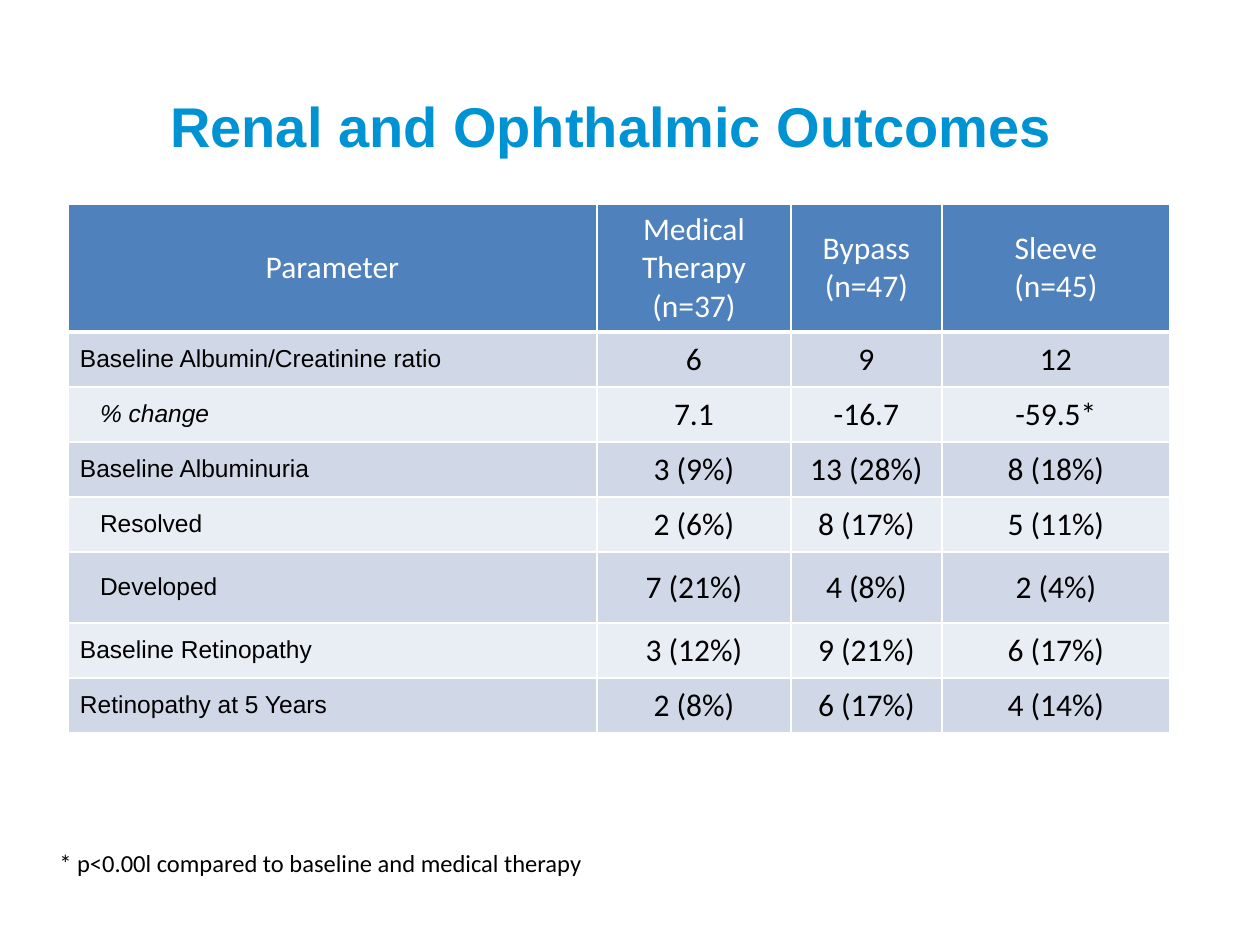
import pptx
import pptx.dml.color
import pptx.enum.text
import pptx.oxml
import pptx.oxml.ns
import pptx.util

RGBColor = pptx.dml.color.RGBColor
ALIGN = pptx.enum.text.PP_ALIGN
MIDDLE = pptx.enum.text.MSO_ANCHOR.MIDDLE

TITLE_BLUE = RGBColor(0x00, 0x93, 0xD3)
HEADER_BLUE = RGBColor(0x4F, 0x81, 0xBD)
BANDS = (RGBColor(0xD0, 0xD8, 0xE8), RGBColor(0xE9, 0xED, 0xF4))
WHITE = RGBColor(0xFF, 0xFF, 0xFF)
BLACK = RGBColor(0x00, 0x00, 0x00)

PX_PER_INCH = 126
COLUMN_WIDTHS = (529, 194, 151, 228)
HEADER_HEIGHT, ROW_HEIGHT, TALL_ROW_HEIGHT = 126, 55, 71
CELL_MARGIN, SUB_ROW_MARGIN = 12, 32

HEADERS = (
    ["Parameter"],
    ["Medical", "Therapy\v(n=37)"],
    ["Bypass", "(n=47)"],
    ["Sleeve", "(n=45)"],
)
SUB_ROWS = ("% change", "Resolved", "Developed")
OUTCOMES = (
    ("Baseline Albumin/Creatinine ratio", "6", "9", "12"),
    ("% change", "7.1", "-16.7", "-59.5*"),
    ("Baseline Albuminuria", "3 (9%)", "13 (28%)", "8 (18%)"),
    ("Resolved", "2 (6%)", "8 (17%)", "5 (11%)"),
    ("Developed", "7 (21%)", "4 (8%)", "2 (4%)"),
    ("Baseline Retinopathy", "3 (12%)", "9 (21%)", "6 (17%)"),
    ("Retinopathy at 5 Years", "2 (8%)", "6 (17%)", "4 (14%)"),
)


def px(length):
    return pptx.util.Emu(round(length * pptx.util.Inches(1) / PX_PER_INCH))


def write(text_frame, lines, size=18, font="Calibri", color=BLACK,
          bold=False, italic=False, align=ALIGN.CENTER):
    """Write one paragraph per line; a vertical tab is a line break."""
    for index, line in enumerate(lines):
        paragraph = text_frame.add_paragraph() if index else text_frame.paragraphs[0]
        paragraph.text = line
        paragraph.alignment = align
        for run in paragraph.runs:
            run.font.size = pptx.util.Pt(size)
            run.font.name = font
            run.font.color.rgb = color
            run.font.bold = bold
            run.font.italic = italic


def style_cell(cell, fill, bottom_width=1):
    cell.vertical_anchor = MIDDLE
    cell.fill.solid()
    cell.fill.fore_color.rgb = fill
    properties = cell._tc.get_or_add_tcPr()
    for index, side in enumerate("LRTB"):
        width = pptx.util.Pt(bottom_width if side == "B" else 1)
        properties.insert(index, pptx.oxml.parse_xml(
            f'<a:ln{side} {pptx.oxml.ns.nsdecls("a")} w="{width}">'
            f'<a:solidFill><a:srgbClr val="{WHITE}"/></a:solidFill></a:ln{side}>'))


def add_title(slide, text):
    title = slide.shapes.title
    title.left, title.top, title.width, title.height = map(px, (44, 66, 1134, 118))
    title.text_frame.vertical_anchor = MIDDLE
    write(title.text_frame, [text], size=32, font="Arial", color=TITLE_BLUE, bold=True)


def add_outcomes_table(slide):
    heights = [HEADER_HEIGHT] + [
        TALL_ROW_HEIGHT if row[0] == "Developed" else ROW_HEIGHT for row in OUTCOMES]
    table = slide.shapes.add_table(
        len(heights), len(COLUMN_WIDTHS), px(68), px(204),
        px(sum(COLUMN_WIDTHS)), px(sum(heights))).table
    for column, width in zip(table.columns, COLUMN_WIDTHS):
        column.width = px(width)
    for row, height in zip(table.rows, heights):
        row.height = px(height)

    for cell, lines in zip(table.rows[0].cells, HEADERS):
        style_cell(cell, HEADER_BLUE, bottom_width=3)
        write(cell.text_frame, lines, color=WHITE)

    for index, (label, *values) in enumerate(OUTCOMES):
        label_cell, *value_cells = table.rows[index + 1].cells
        band = BANDS[index % 2]
        style_cell(label_cell, band)
        label_cell.margin_left = px(SUB_ROW_MARGIN if label in SUB_ROWS else CELL_MARGIN)
        write(label_cell.text_frame, [label], size=14, font="Arial",
              italic=label == "% change", align=ALIGN.LEFT)
        for cell, value in zip(value_cells, values):
            style_cell(cell, band)
            write(cell.text_frame, [value])


def add_footnote(slide, text):
    footnote = slide.shapes.add_textbox(px(47), px(842), px(973), px(43))
    footnote.text_frame.word_wrap = True
    write(footnote.text_frame, [text], size=14, align=ALIGN.LEFT)


def main():
    presentation = pptx.Presentation()
    presentation.slide_width, presentation.slide_height = px(1260), px(945)
    slide = presentation.slides.add_slide(presentation.slide_layouts[5])
    add_title(slide, "Renal and Ophthalmic Outcomes")
    add_outcomes_table(slide)
    add_footnote(slide, "* p<0.00l compared to baseline and medical therapy")
    presentation.save("out.pptx")


if __name__ == "__main__":
    main()
